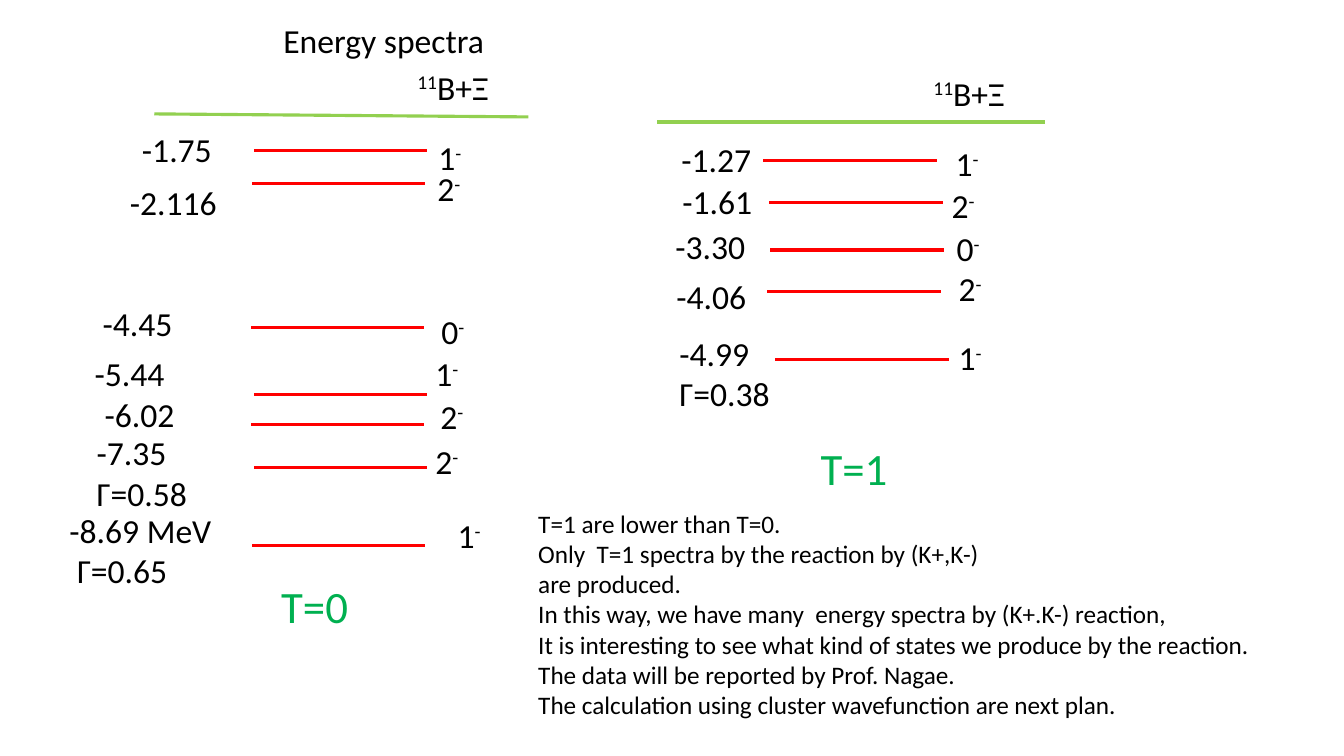
import pptx
import pptx.dml.color
import pptx.enum.shapes
import pptx.enum.text
import pptx.util
from lxml import etree
from pptx.util import Inches

COLOURS = {"text": "000000", "threshold": "92D050", "level": "FF0000", "isospin": "00B050"}
FONT = "Calibri"
LEVEL_LENGTH = 1.72

# Each level: energy lines, energy box (left, top, width), line start, spin, spin position
T0_LEVELS = [
    (["-1.75"], (1.31, 1.23, 0.9), (2.52, 1.49), "1", (4.25, 1.31)),
    (["-2.116"], (1.19, 1.76, 1.07), (2.5, 1.82), "2", (4.24, 1.62)),
    (["-4.45"], (0.92, 2.96, 0.9), (2.49, 3.25), "0", (4.28, 3.04)),
    (["-5.44"], (0.84, 3.45, 0.9), (2.52, 3.91), "1", (4.22, 3.45)),
    (["-6.02"], (0.94, 3.86, 0.9), (2.49, 4.21), "2", (4.27, 3.88)),
    (["-7.35", "Γ=0.58"], (0.86, 4.24, 1.1), (2.52, 4.64), "2", (4.22, 4.33)),
    (["-8.69 MeV", " Γ=0.65"], (0.59, 5.01, 1.62), (2.5, 5.41), "1", (4.44, 5.06)),
]
T1_LEVELS = [
    (["-1.27"], (6.66, 1.33, 0.9), (7.57, 1.59), "1", (9.38, 1.37)),
    (["-1.61"], (6.67, 1.75, 0.9), (7.63, 2.01), "2", (9.34, 1.79)),
    (["-3.30"], (6.6, 2.19, 0.9), (7.64, 2.48), "0", (9.39, 2.21)),
    (["-4.06"], (6.61, 2.69, 0.9), (7.61, 2.89), "2", (9.41, 2.61)),
    (["-4.99", "Γ=0.38"], (6.64, 3.25, 1.1), (7.69, 3.57), "1", (9.41, 3.29)),
]
# Each spectrum: threshold ends, nucleus position, levels, isospin label and position
SPECTRA = [
    ((1.53, 1.13), (5.24, 1.16), (4.04, 0.61), T0_LEVELS, "T=0", (2.69, 5.69)),
    ((6.52, 1.21), (10.36, 1.21), (9.16, 0.67), T1_LEVELS, "T=1", (8.04, 4.32)),
]
REMARKS = [
    "T=1 are lower than T=0.",
    "Only  T=1 spectra by the reaction by (K+,K-)",
    "are produced.",
    "In this way, we have many  energy spectra by (K+.K-) reaction,",
    "It is interesting to see what kind of states we produce by the reaction.",
    "The data will be reported by Prof. Nagae.",
    "The calculation using cluster wavefunction are next plan.",
]


def rgb(name):
    return pptx.dml.color.RGBColor.from_string(COLOURS[name])


def format_paragraph(paragraph, size, colour):
    paragraph.alignment = pptx.enum.text.PP_ALIGN.LEFT
    paragraph.font.name = FONT
    paragraph.font.size = pptx.util.Pt(size)
    paragraph.font.color.rgb = rgb(colour)


def add_text(slide, box, lines, size=24, colour="text"):
    """Add a text box; each line is a list of (text, is superscript) runs."""
    shape = slide.shapes.add_textbox(*map(Inches, box))
    frame = shape.text_frame
    frame.word_wrap = False
    frame.auto_size = pptx.enum.text.MSO_AUTO_SIZE.SHAPE_TO_FIT_TEXT
    for index, runs in enumerate(lines):
        paragraph = frame.add_paragraph() if index else frame.paragraphs[0]
        format_paragraph(paragraph, size, colour)
        for text, superscript in runs:
            run = paragraph.add_run()
            run.text = text
            if superscript:
                run._r.get_or_add_rPr().set("baseline", "30000")


def plain(lines):
    return [[(line, False)] for line in lines]


def add_line(slide, start, end, colour):
    connector = slide.shapes.add_connector(
        pptx.enum.shapes.MSO_CONNECTOR.STRAIGHT, *map(Inches, (*start, *end)))
    connector.line.color.rgb = rgb(colour)
    connector.line.width = pptx.util.Pt(2.25)
    etree.SubElement(connector._element.spPr, pptx.oxml.ns.qn("a:effectLst"))


def add_level(slide, energy, energy_box, start, spin, spin_position):
    height = 0.5 if len(energy) == 1 else 0.91
    add_text(slide, (*energy_box, height), plain(energy))
    add_line(slide, start, (start[0] + LEVEL_LENGTH, start[1]), "level")
    add_text(slide, (*spin_position, 0.44, 0.5), [[(spin, False), ("-", True)]])


def add_spectrum(slide, start, end, nucleus_position, levels, isospin, isospin_position):
    add_line(slide, start, end, "threshold")
    add_text(slide, (*nucleus_position, 0.95, 0.5), [[("11", True), ("B+Ξ", False)]])
    for level in levels:
        add_level(slide, *level)
    add_text(slide, (*isospin_position, 0.87, 0.64), plain([isospin]), 32, "isospin")


def set_title(slide, text):
    title = slide.shapes.title
    title.left, title.top, title.width, title.height = map(Inches, (2.71, 0.15, 2.21, 1.31))
    frame = title.text_frame
    frame.text = text
    frame.word_wrap = False
    frame.auto_size = pptx.enum.text.MSO_AUTO_SIZE.NONE
    frame.vertical_anchor = pptx.enum.text.MSO_ANCHOR.TOP
    format_paragraph(frame.paragraphs[0], 24, "text")


def main():
    presentation = pptx.Presentation()
    presentation.slide_width = Inches(13.33)
    presentation.slide_height = Inches(7.5)
    slide = presentation.slides.add_slide(presentation.slide_layouts.get_by_name("Title Only"))

    # Heading
    set_title(slide, "Energy spectra")

    # Level schemes for both isospins
    for spectrum in SPECTRA:
        add_spectrum(slide, *spectrum)

    # Remarks
    add_text(slide, (5.24, 4.99, 7.34, 2.22), plain(REMARKS), 18)

    presentation.save("out.pptx")


if __name__ == "__main__":
    main()
